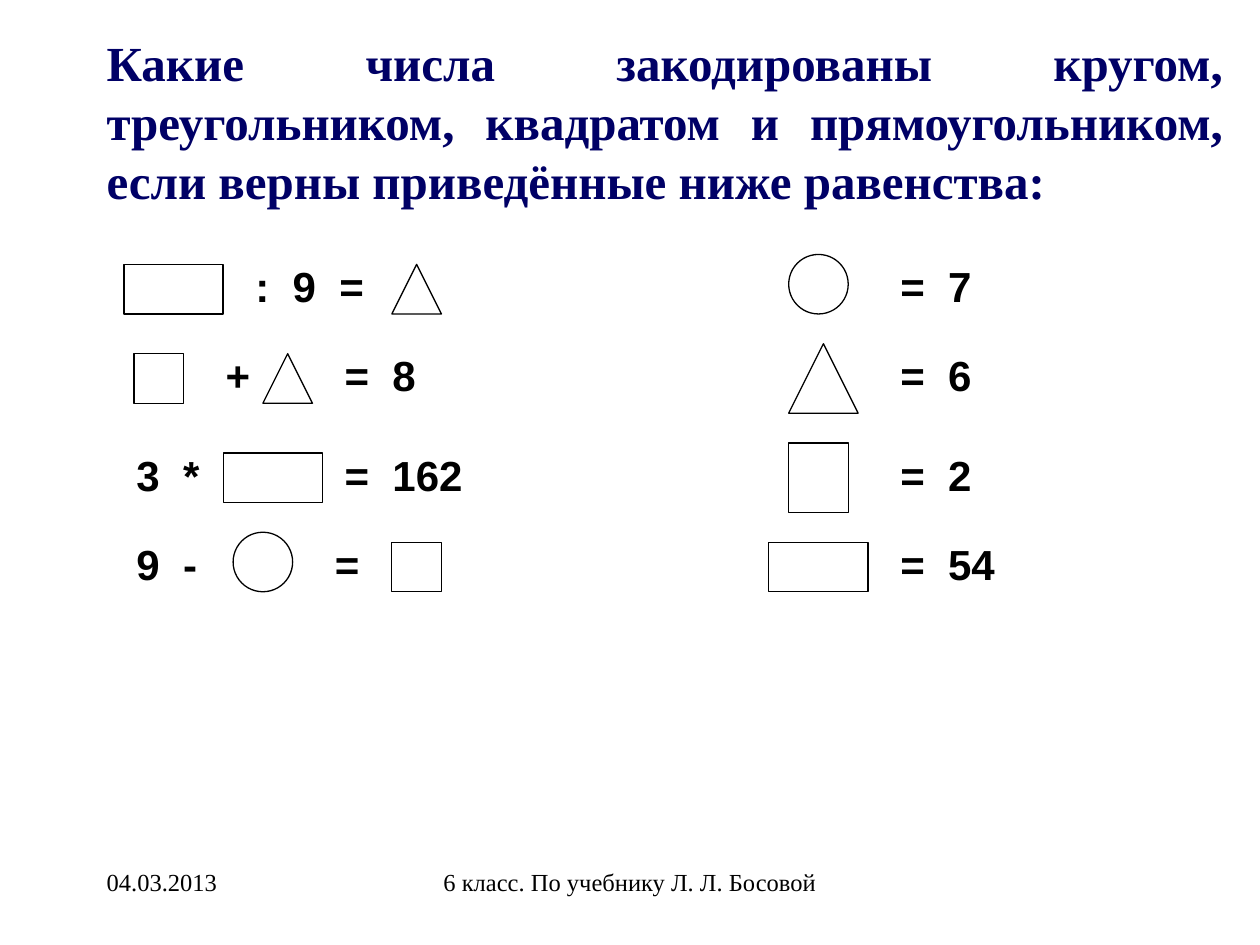
"""Build a slide of equations whose numbers are coded by shapes."""
import pptx
import pptx.dml.color
import pptx.enum.shapes
import pptx.enum.text
import pptx.util

Cm = pptx.util.Cm
Pt = pptx.util.Pt
KIND = pptx.enum.shapes.MSO_SHAPE
ALIGN = pptx.enum.text.PP_ALIGN
COLOURS = {"ink": "000000", "paper": "FFFFFF", "title": "000066"}
FORMATS = {
    "title": {"name": "Times New Roman", "size": Pt(28), "bold": True},
    "equation": {"name": "Arial", "size": Pt(24), "bold": True},
    "footer": {"name": "Times New Roman", "size": Pt(14), "bold": False},
}

deck = pptx.Presentation()
deck.slide_width, deck.slide_height = Cm(25.4), Cm(19.05)
page = deck.slides.add_slide(deck.slide_layouts[6])


def colour(name):
    return pptx.dml.color.RGBColor.from_string(COLOURS[name])


def add_text(text, left, top, width, height, style, align=ALIGN.LEFT, ink="ink"):
    box = page.shapes.add_textbox(Cm(left), Cm(top), Cm(width), Cm(height))
    box.text_frame.word_wrap = True
    para = box.text_frame.paragraphs[0]
    para.alignment = align
    span = para.add_run()
    span.text = text
    for key, value in FORMATS[style].items():
        setattr(span.font, key, value)
    span.font.color.rgb = colour(ink)


add_text(
    "Какие числа закодированы кругом, треугольником, квадратом и прямоугольником, "
    "если верны приведённые ниже равенства:",
    1.9, 0.53, 23, 3.81, "title", ALIGN.JUSTIFY, "title")
add_text("04.03.2013", 1.9, 17.35, 5.29, 1.27, "footer")
add_text("6 класс. По учебнику Л. Л. Босовой", 8.68, 17.35, 8.04, 1.27,
         "footer", ALIGN.CENTER)

row_tops = [5.13, 6.93, 8.93, 10.73]
row_texts = [
    [(":  9  =", 4.9, 2.8), ("=  7", 17.9, 3.2)],
    [("+", 4.3, 1.2), ("=  8", 6.7, 2.6), ("=  6", 17.9, 3.2)],
    [("3  *", 2.5, 1.8), ("=  162", 6.7, 3.2), ("=  2", 17.9, 3.2)],
    [("9  -", 2.5, 1.8), ("=", 6.5, 1.2), ("=  54", 17.9, 3.2)],
]
row_figures = [
    [(KIND.RECTANGLE, 2.5, 0.2, 2, 1), (KIND.ISOSCELES_TRIANGLE, 7.9, 0.2, 1, 1),
     (KIND.OVAL, 15.9, 0, 1.2, 1.2)],
    [(KIND.RECTANGLE, 2.7, 0.2, 1, 1), (KIND.ISOSCELES_TRIANGLE, 5.3, 0.2, 1, 1),
     (KIND.ISOSCELES_TRIANGLE, 15.9, 0, 1.4, 1.4)],
    [(KIND.RECTANGLE, 4.5, 0.2, 2, 1), (KIND.RECTANGLE, 15.9, 0, 1.2, 1.4)],
    [(KIND.OVAL, 4.7, 0, 1.2, 1.2), (KIND.RECTANGLE, 7.9, 0.2, 1, 1),
     (KIND.RECTANGLE, 15.5, 0.2, 2, 1)],
]
for top, texts, figures in zip(row_tops, row_texts, row_figures):
    for text, left, width in texts:
        add_text(text, left, top, width, 1.27, "equation")
    for kind, left, drop, width, height in figures:
        figure = page.shapes.add_shape(
            kind, Cm(left), Cm(top + drop), Cm(width), Cm(height))
        figure.shadow.inherit = False
        figure.fill.solid()
        figure.fill.fore_color.rgb = colour("paper")
        figure.line.color.rgb = colour("ink")
        figure.line.width = Pt(0.75)

deck.save("out.pptx")
